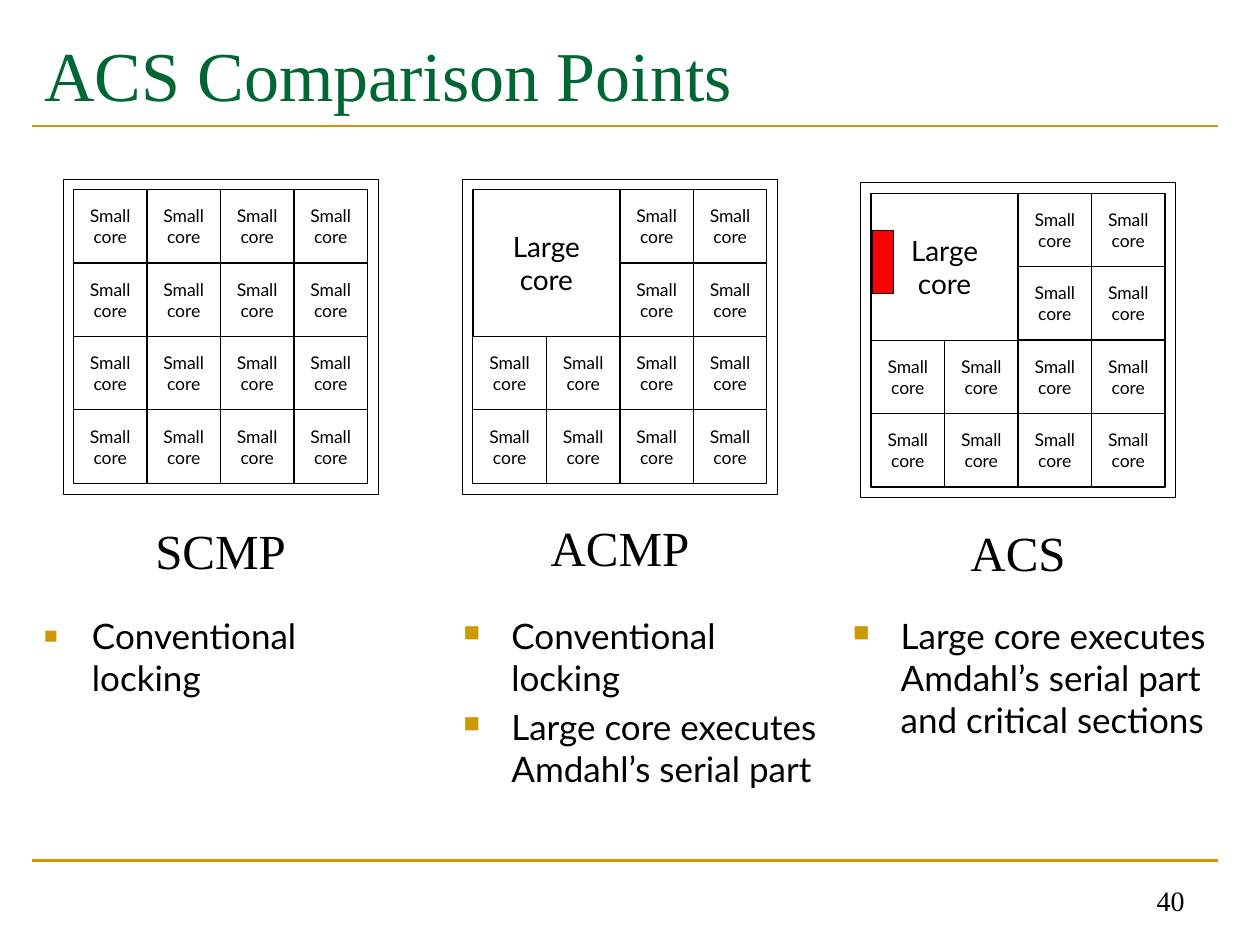
from dataclasses import dataclass

from lxml.etree import SubElement
from pptx import Presentation
from pptx.dml.color import RGBColor
from pptx.enum.shapes import MSO_CONNECTOR, MSO_SHAPE
from pptx.enum.text import MSO_ANCHOR, MSO_AUTO_SIZE, PP_ALIGN
from pptx.oxml.ns import qn
from pptx.util import Inches, Pt


@dataclass(frozen=True)
class Theme:
    serif: str = "Times New Roman"
    sans: str = "Lato"
    ink: str = "000000"
    title: str = "006633"
    accent: str = "CC9900"
    paper: str = "FFFFFF"
    marker: str = "FF0000"
    title_pt: float = 40
    label_pt: float = 28
    list_pt: float = 20
    large_pt: float = 16
    small_pt: float = 10
    number_pt: float = 16


@dataclass(frozen=True)
class Chip:
    name: str
    x: float
    y: float
    label_y: float
    has_large: bool


@dataclass(frozen=True)
class Points:
    x: float
    items: tuple[str, ...]


T = Theme()
CELL = 7 / 12
GRID = 4
MARGIN = 1 / 12
CHIP = GRID * CELL + 2 * MARGIN
LIST_BOX = (4.83, 3.08, 1.94)

CHIPS = (
    Chip("ACMP", 3.67, 1.42, 4.06, True),
    Chip("ACS", 6.83, 1.45, 4.1, True),
    Chip("SCMP", 0.5, 1.42, 4.08, False),
)
LISTS = (
    Points(0.25, ("Conventional locking",)),
    Points(3.58, ("Conventional locking", "Large core executes Amdahl’s serial part")),
    Points(6.67, ("Large core executes Amdahl’s serial part and critical sections",)),
)


def rgb(color: str) -> RGBColor:
    return RGBColor.from_string(color)


def place(sp, x: float, y: float, w: float, h: float) -> None:
    sp.left, sp.top, sp.width, sp.height = map(Inches, (x, y, w, h))


def add_run(p, text: str, font: str, size: float, color: str = T.ink) -> None:
    r = p.add_run()
    r.text = text
    r.font.name = font
    r.font.size = Pt(size)
    r.font.color.rgb = rgb(color)


def add_break(p, size: float) -> None:
    p.add_line_break()
    br = p._p.findall(qn("a:br"))[-1]
    SubElement(br, qn("a:rPr"), sz=str(int(size * 100)))


def add_rule(s, y: float) -> None:
    ends = map(Inches, (0.25, y, 9.67, y))
    cx = s.shapes.add_connector(MSO_CONNECTOR.STRAIGHT, *ends)
    cx.line.color.rgb = rgb(T.accent)
    cx.line.width = Pt(1.5)
    SubElement(cx._element.spPr, qn("a:effectLst"))


def add_rect(shapes, x: float, y: float, w: float, h: float,
             fill: str | None = None, line: float | None = 0.75):
    sp = shapes.add_shape(MSO_SHAPE.RECTANGLE, *map(Inches, (x, y, w, h)))
    sp.shadow.inherit = False
    if fill:
        sp.fill.solid()
        sp.fill.fore_color.rgb = rgb(fill)
    else:
        sp.fill.background()
    if line:
        sp.line.color.rgb = rgb(T.ink)
        sp.line.width = Pt(line)
    else:
        sp.line.fill.background()
    return sp


def add_core(shapes, x: float, y: float, large: bool = False) -> None:
    side = 2 * CELL if large else CELL
    tf = add_rect(shapes, x, y, side, side).text_frame
    tf.word_wrap = False
    tf.vertical_anchor = MSO_ANCHOR.MIDDLE
    p = tf.paragraphs[0]
    p.alignment = PP_ALIGN.CENTER
    size = T.large_pt if large else T.small_pt
    add_run(p, "Large" if large else "Small", T.sans, size)
    if large:
        p = tf.add_paragraph()
        p.alignment = PP_ALIGN.CENTER
    else:
        add_break(p, size)
    add_run(p, "core", T.sans, size)


def add_chip(s, chip: Chip) -> None:
    shapes = s.shapes.add_group_shape().shapes
    add_rect(shapes, chip.x, chip.y, CHIP, CHIP, line=0.25)
    x0, y0 = chip.x + MARGIN, chip.y + MARGIN
    for row in range(GRID):
        for col in range(GRID):
            if not (chip.has_large and row < 2 and col < 2):
                add_core(shapes, x0 + col * CELL, y0 + row * CELL)
    if chip.has_large:
        add_core(shapes, x0, y0, large=True)
    sp = add_rect(shapes, x0, chip.label_y, GRID * CELL, 0.57, T.paper, None)
    tf = sp.text_frame
    tf.word_wrap = True
    tf.vertical_anchor = MSO_ANCHOR.TOP
    p = tf.paragraphs[0]
    p.alignment = PP_ALIGN.CENTER
    p.space_before = Pt(T.label_pt / 2)
    add_run(p, chip.name, T.serif, T.label_pt)


def fill_list(sp, points: Points) -> None:
    y, w, h = LIST_BOX
    place(sp, points.x, y, w, h)
    tf = sp.text_frame
    tf.word_wrap = True
    tf.auto_size = MSO_AUTO_SIZE.NONE
    for i, item in enumerate(points.items):
        p = tf.add_paragraph() if i else tf.paragraphs[0]
        p.space_before = Pt(T.list_pt / 5)
        pPr = p._p.get_or_add_pPr()
        indent = Inches(0.38)
        pPr.set("marL", str(indent))
        pPr.set("indent", str(-indent))
        clr = SubElement(pPr, qn("a:buClr"))
        SubElement(clr, qn("a:srgbClr"), val=T.accent)
        SubElement(pPr, qn("a:buSzPct"), val="65000")
        SubElement(pPr, qn("a:buChar"), char="■")
        add_run(p, item, T.sans, T.list_pt)


def add_title(s, text: str) -> None:
    sp = s.shapes.title
    place(sp, 0.25, 0.17, 9.42, 0.83)
    tf = sp.text_frame
    tf.auto_size = MSO_AUTO_SIZE.NONE
    tf.vertical_anchor = MSO_ANCHOR.MIDDLE
    p = tf.paragraphs[0]
    p.alignment = PP_ALIGN.LEFT
    add_run(p, text, T.serif, T.title_pt, T.title)


def add_number(s, text: str) -> None:
    sp = s.shapes.add_textbox(*map(Inches, (7.17, 6.83, 2.33, 0.5)))
    tf = sp.text_frame
    tf.word_wrap = True
    tf.vertical_anchor = MSO_ANCHOR.BOTTOM
    p = tf.paragraphs[0]
    p.alignment = PP_ALIGN.RIGHT
    add_run(p, text, T.serif, T.number_pt)


def main() -> None:
    prs = Presentation()
    prs.slide_width, prs.slide_height = Inches(10), Inches(7.5)
    s = prs.slides.add_slide(prs.slide_layouts[1])
    for y in (6.83, 1):
        add_rule(s, y)
    add_title(s, "ACS Comparison Points")
    fill_list(s.placeholders[1], LISTS[0])
    add_number(s, "40")
    for chip in CHIPS:
        add_chip(s, chip)
    for points in LISTS[1:]:
        fill_list(s.shapes.add_textbox(0, 0, 0, 0), points)
    add_rect(s.shapes, 6.92, 1.83, 0.17, 0.5, T.marker)
    prs.save("out.pptx")


if __name__ == "__main__":
    main()
